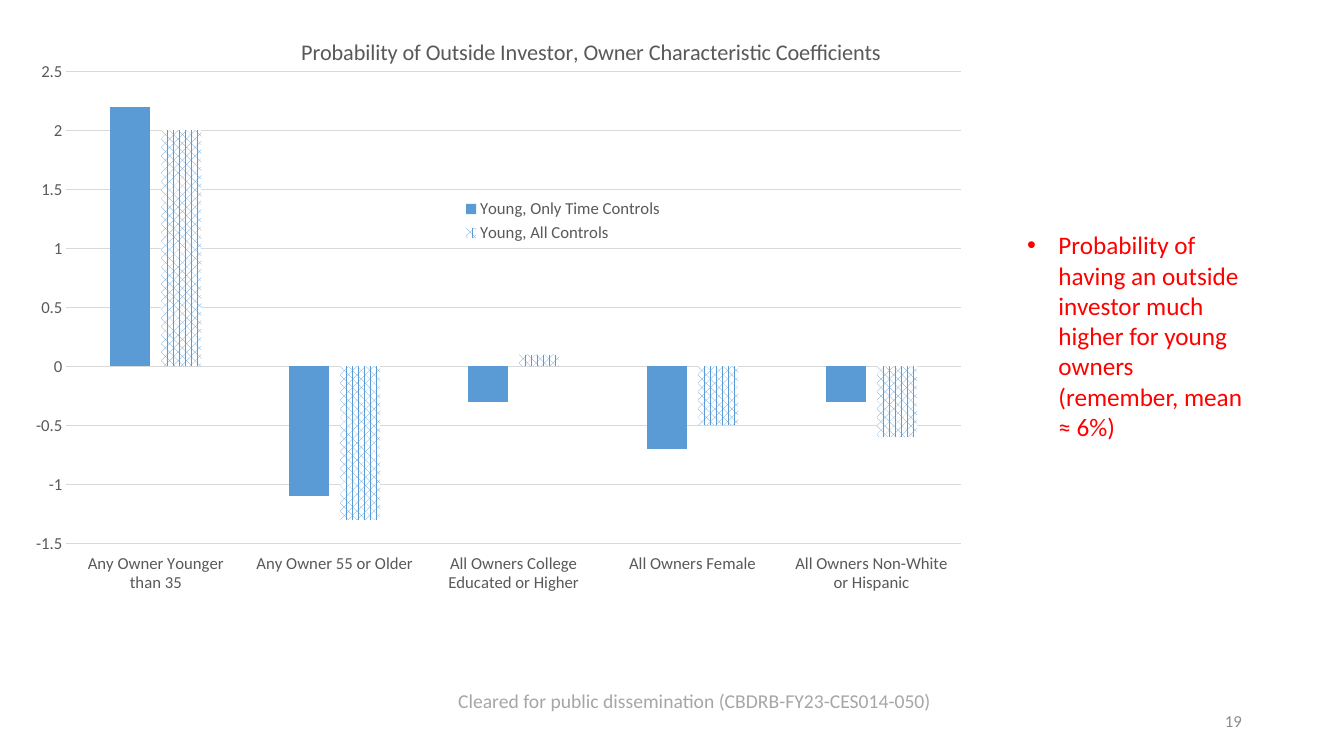
from lxml import etree
from pptx import Presentation
from pptx.chart.data import CategoryChartData
from pptx.dml.color import RGBColor
from pptx.enum import chart as charts, dml, text
from pptx.oxml import ns
from pptx.util import Cm, Pt

FONT = "Calibri"
BLUE, GREY, RULE = "5B9BD5", "595959", "D9D9D9"
CATEGORIES = [
    "Any Owner Younger than 35",
    "Any Owner 55 or Older",
    "All Owners College Educated or Higher",
    "All Owners Female",
    "All Owners Non-White or Hispanic",
]
COEFFICIENTS = {
    "Young, Only Time Controls": (2.2, -1.1, -0.3, -0.7, -0.3),
    "Young, All Controls": (2, -1.3, 0.1, -0.5, -0.6),
}


def colour(value):
    return RGBColor.from_string(value)


def style(font, size, value):
    font.name = FONT
    font.size = Pt(size)
    font.bold = False
    font.color.rgb = colour(value)


def rule(line):
    line.color.rgb = colour(RULE)
    line.width = Pt(0.75)


def place_part(parent, index, **settings):
    for old in parent.findall(ns.qn("c:layout")):
        parent.remove(old)
    layout = etree.Element(ns.qn("c:layout"))
    manual = etree.SubElement(layout, ns.qn("c:manualLayout"))
    for name, value in settings.items():
        etree.SubElement(manual, ns.qn(f"c:{name}")).set("val", str(value))
    parent.insert(index, layout)


def add_coefficient_chart(page, left, top, width, height):
    data = CategoryChartData()
    data.categories = CATEGORIES
    for name, values in COEFFICIENTS.items():
        data.add_series(name, values)
    chart = page.shapes.add_chart(
        charts.XL_CHART_TYPE.COLUMN_CLUSTERED, left, top, width, height, data
    ).chart
    style(chart.font, 12, GREY)

    chart.has_title = True
    heading = chart.chart_title.text_frame.paragraphs[0]
    heading.text = "Probability of Outside Investor, Owner Characteristic Coefficients"
    style(heading.font, 16, GREY)

    chart.has_legend = True
    chart.legend.position = charts.XL_LEGEND_POSITION.RIGHT
    chart.legend.include_in_layout = True
    style(chart.legend.font, 12, GREY)

    category_axis, value_axis = chart.category_axis, chart.value_axis
    for axis in (category_axis, value_axis):
        axis.major_tick_mark = charts.XL_TICK_MARK.NONE
        axis.minor_tick_mark = charts.XL_TICK_MARK.NONE
        style(axis.tick_labels.font, 12, GREY)
    category_axis.tick_label_position = charts.XL_TICK_LABEL_POSITION.LOW
    rule(category_axis.format.line)
    value_axis.minimum_scale, value_axis.maximum_scale = -1.5, 2.5
    value_axis.major_unit = 0.5
    value_axis.format.line.fill.background()
    rule(value_axis.major_gridlines.format.line)

    plot = chart.plots[0]
    plot.gap_width, plot.overlap = 219, -27
    plot.vary_by_categories = False
    time_controls, all_controls = plot.series
    for series in plot.series:
        series.invert_if_negative = False
    time_controls.format.fill.solid()
    time_controls.format.fill.fore_color.rgb = colour(BLUE)
    pattern = all_controls.format.fill
    pattern.patterned()
    pattern.pattern = dml.MSO_PATTERN.PERCENT_60
    pattern.fore_color.rgb = colour(BLUE)
    pattern.back_color.rgb = colour("FFFFFF")

    body = chart.element.find(ns.qn("c:chart"))
    edges = {"xMode": "edge", "yMode": "edge"}
    place_part(body.find(ns.qn("c:title")), 1, **edges, x=0.27, y=0.05)
    place_part(body.find(ns.qn("c:legend")), 1, **edges, x=0.43, y=0.3, w=0.24, h=0.08)
    place_part(body.find(ns.qn("c:plotArea")), 0, layoutTarget="inner", **edges,
               x=0.027, y=0.11, w=0.942, h=0.726)


def add_takeaway(page, left, top, width, height):
    box = page.placeholders[1]
    box.left, box.top, box.width, box.height = left, top, width, height
    frame = box.text_frame
    frame.auto_size = text.MSO_AUTO_SIZE.SHAPE_TO_FIT_TEXT
    para = frame.paragraphs[0]
    para.text = ("Probability of having an outside investor much higher "
                 "for young owners (remember, mean ≈ 6%)")
    para.space_before = Pt(0)
    properties = para._p.get_or_add_pPr()
    properties.set("marL", str(Cm(0.79)))
    properties.set("indent", str(-Cm(0.79)))
    etree.SubElement(properties, ns.qn("a:buFont")).set("typeface", "Arial")
    etree.SubElement(properties, ns.qn("a:buChar")).set("char", "•")
    style(para.font, 18, "FF0000")


def add_note(page, left, top, width, height, words, size, value, alignment):
    frame = page.shapes.add_textbox(left, top, width, height).text_frame
    frame.word_wrap = True
    frame.vertical_anchor = text.MSO_ANCHOR.MIDDLE
    para = frame.paragraphs[0]
    para.text = words
    para.alignment = alignment
    style(para.font, size, value)


def main():
    deck = Presentation()
    deck.slide_width, deck.slide_height = Cm(33.87), Cm(19.05)
    page = deck.slides.add_slide(deck.slide_layouts[1])
    title = page.shapes.title.element
    title.getparent().remove(title)
    add_coefficient_chart(page, Cm(0.91), Cm(0), Cm(24.05), Cm(16.38))
    add_takeaway(page, Cm(25.63), Cm(5.66), Cm(6.25), Cm(5.64))
    add_note(page, Cm(10.62), Cm(17.22), Cm(13.77), Cm(0.86),
             "Cleared for public dissemination (CBDRB-FY23-CES014-050)",
             14, "A6A6A6", text.PP_ALIGN.CENTER)
    add_note(page, Cm(23.93), Cm(17.65), Cm(7.62), Cm(1.02),
             "19", 12, "8C8C8C", text.PP_ALIGN.RIGHT)
    deck.save("out.pptx")


if __name__ == "__main__":
    main()
